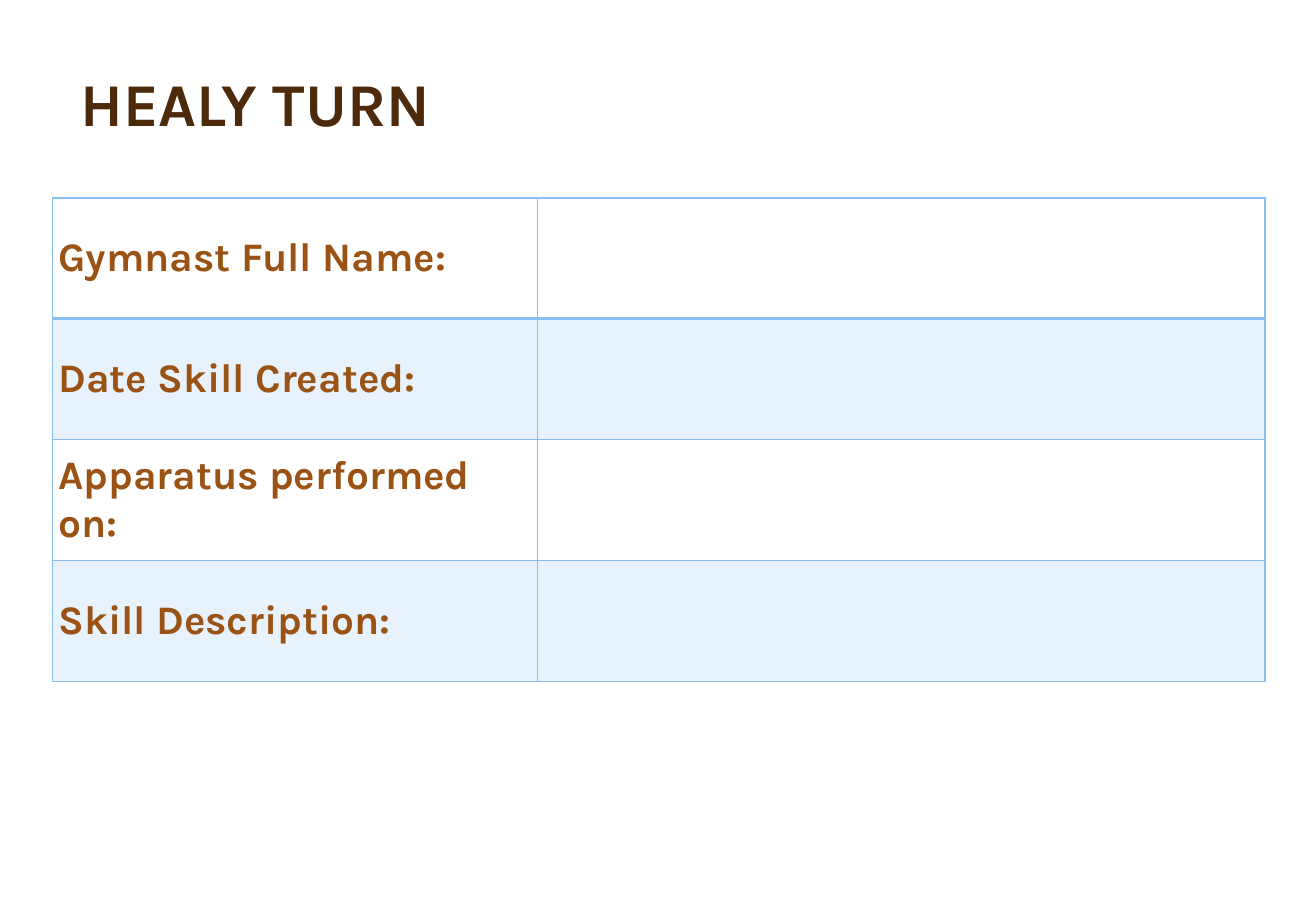
from dataclasses import dataclass

from lxml.etree import SubElement
from pptx import Presentation
from pptx.dml.color import RGBColor as RGB
from pptx.enum.text import MSO_ANCHOR as Anchor, MSO_AUTO_SIZE as AutoSize, PP_ALIGN as Align
from pptx.oxml.ns import qn
from pptx.util import Inches, Pt

# Content
TITLE = "HEALY TURN"
LABELS = ["Gymnast Full Name:", "Date Skill Created:",
          "Apparatus performed on:", "Skill Description:"]


@dataclass(frozen=True)
class Theme:
    font: str = "Karla"
    title_color: str = "4D2A0B"
    label_color: str = "9A5315"
    grid_color: str = "8BBEF1"
    title_size: int = 36
    label_size: int = 24
    band_alpha: int = 20
    line: int = 1
    header_line: int = 2


theme = Theme()

# Layout: label and answer columns share the width 2 : 3
WIDTH, HEIGHT = 10.83, 7.5
TITLE_BOX = (0.56, 0.46, 8.94, 0.74)
TABLE_BOX = (0.43, 1.63, 9.98, 3.98)
COLUMN_SHARES = (0.4, 0.6)
CELL_MARGIN = 0.05


def add_run(p, text, size, color):
    r = p.add_run()
    r.text = text
    r.font.name, r.font.size, r.font.bold = theme.font, Pt(size), True
    r.font.color.rgb = RGB.from_string(color)


def set_border(cell, side, width):
    ln = SubElement(cell._tc.get_or_add_tcPr(), qn(f"a:{side}"), w=str(Pt(width)))
    fill = SubElement(ln, qn("a:solidFill"))
    SubElement(fill, qn("a:srgbClr"), val=theme.grid_color)


def set_band(cell):
    cell.fill.solid()
    cell.fill.fore_color.rgb = RGB.from_string(theme.grid_color)
    color = cell._tc.tcPr.find(qn("a:solidFill")).find(qn("a:srgbClr"))
    SubElement(color, qn("a:alpha"), val=str(theme.band_alpha * 1000))


def format_cell(cell, row):
    cell.vertical_anchor = Anchor.MIDDLE
    cell.margin_left = cell.margin_right = Inches(CELL_MARGIN)
    cell.margin_top = cell.margin_bottom = Inches(CELL_MARGIN)
    # The line below the first row is heavier, seen from both sides
    top = theme.header_line if row == 1 else theme.line
    bottom = theme.header_line if row == 0 else theme.line
    for side, width in (("lnL", theme.line), ("lnR", theme.line),
                        ("lnT", top), ("lnB", bottom)):
        set_border(cell, side, width)
    if row % 2:
        set_band(cell)
    else:
        cell.fill.background()


def add_title(slide):
    sp = slide.shapes.title
    sp.left, sp.top, sp.width, sp.height = map(Inches, TITLE_BOX)
    tf = sp.text_frame
    tf.word_wrap, tf.auto_size = True, AutoSize.NONE
    tf.vertical_anchor = Anchor.BOTTOM
    p = tf.paragraphs[0]
    p.alignment, p.line_spacing = Align.LEFT, 0.9
    add_run(p, TITLE, theme.title_size, theme.title_color)


def add_form(slide):
    table = slide.shapes.add_table(len(LABELS), len(COLUMN_SHARES),
                                   *map(Inches, TABLE_BOX)).table
    table.first_row = table.horz_banding = False
    for column, share in zip(table.columns, COLUMN_SHARES):
        column.width = Inches(TABLE_BOX[2] * share)
    for row, label in enumerate(LABELS):
        for cell in table.rows[row].cells:
            format_cell(cell, row)
        p = table.cell(row, 0).text_frame.paragraphs[0]
        add_run(p, label, theme.label_size, theme.label_color)


def main():
    prs = Presentation()
    prs.slide_width, prs.slide_height = Inches(WIDTH), Inches(HEIGHT)
    slide = prs.slides.add_slide(prs.slide_layouts.get_by_name("Title Only"))
    add_title(slide)
    add_form(slide)
    prs.save("out.pptx")


if __name__ == "__main__":
    main()
